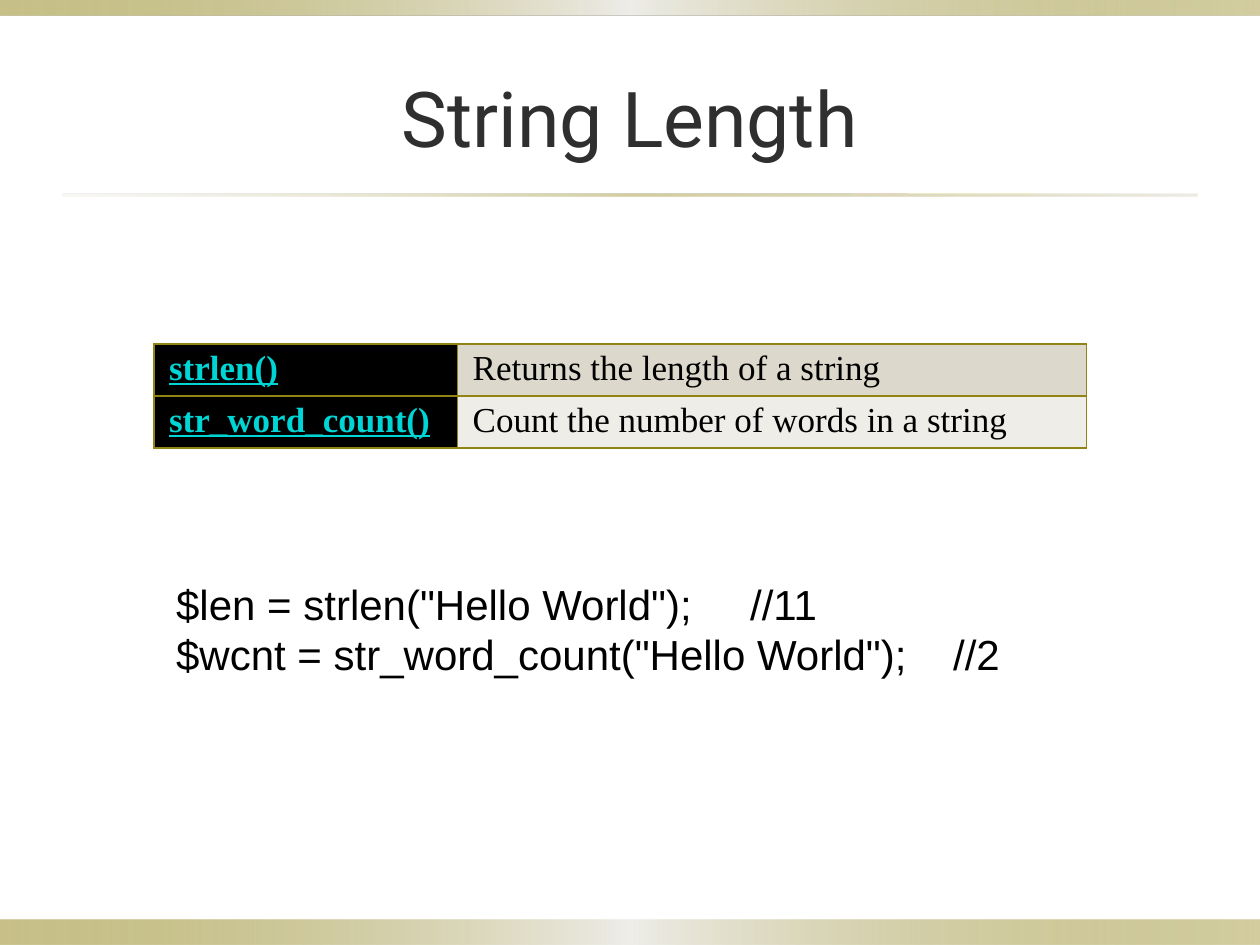
from dataclasses import dataclass

import lxml.etree
import pptx
import pptx.dml.color
import pptx.enum.shapes
import pptx.enum.text
import pptx.oxml
import pptx.oxml.ns
import pptx.util

Pt = pptx.util.Pt
Align = pptx.enum.text.PP_ALIGN
Anchor = pptx.enum.text.MSO_ANCHOR
qn = pptx.oxml.ns.qn


@dataclass(frozen=True)
class Theme:
    olive: str = "918415"
    sand: str = "DCD9CC"
    pale: str = "EEEDE8"
    title: str = "2F2F2F"
    ink: str = "000000"
    link: str = "00D5D5"
    title_size: int = 44
    table_size: int = 20
    code_size: int = 24
    title_font: str = "Roboto"
    table_font: str = "Times New Roman"
    code_font: str = "Arial"


THEME = Theme()
# Gradient stops: position %, colour, opacity %
BAND_STOPS = [(0, THEME.olive, 50), (50, THEME.pale, 100), (100, THEME.olive, 40)]
RULE_STOPS = [(0, THEME.sand, 20), (50, THEME.olive, 40), (100, THEME.sand, 50)]


def rgb(value):
    return pptx.dml.color.RGBColor.from_string(value)


def add_text(paragraph, text, *, font, size, color, bold=False,
             underline=False, align=Align.LEFT, tab=None):
    if tab is not None:
        tabs = lxml.etree.SubElement(paragraph._p.get_or_add_pPr(), qn("a:tabLst"))
        lxml.etree.SubElement(tabs, qn("a:tab"), pos=str(Pt(tab)), algn="l")
    paragraph.alignment = align
    run = paragraph.add_run()
    run.text = text
    run.font.name = font
    run.font.size = Pt(size)
    run.font.bold = bold
    run.font.underline = underline
    run.font.color.rgb = rgb(color)


def add_gradient_bar(slide, left, top, width, height, stops):
    bar = slide.shapes.add_shape(pptx.enum.shapes.MSO_SHAPE.RECTANGLE,
                                 Pt(left), Pt(top), Pt(width), Pt(height))
    bar.shadow.inherit = False
    bar.line.fill.background()
    bar.fill.gradient()
    bar.fill.gradient_angle = 0
    stop_list = bar._element.spPr.find(f".//{qn('a:gsLst')}")
    for default_stop in list(stop_list):
        stop_list.remove(default_stop)
    for position, color, opacity in stops:
        stop = lxml.etree.SubElement(stop_list, qn("a:gs"), pos=str(position * 1000))
        shade = lxml.etree.SubElement(stop, qn("a:srgbClr"), val=color)
        lxml.etree.SubElement(shade, qn("a:alpha"), val=str(opacity * 1000))


def add_frame(slide, left, top, width, height):
    add_gradient_bar(slide, left, top + height - 14.4, width, 14.4, BAND_STOPS)
    add_gradient_bar(slide, left, top, width, 8.64, BAND_STOPS)


def add_title(slide, left, top, width, height):
    add_gradient_bar(slide, left, top + height - 0.72, width, 1.44, RULE_STOPS)
    heading = slide.shapes.add_textbox(Pt(left), Pt(top), Pt(width), Pt(height)).text_frame
    heading.word_wrap = True
    heading.vertical_anchor = Anchor.MIDDLE
    add_text(heading.paragraphs[0], "String Length", font=THEME.title_font,
             size=THEME.title_size, color=THEME.title, align=Align.CENTER)


def add_borders(cell):
    for side in ("a:lnL", "a:lnR", "a:lnT", "a:lnB"):
        border = lxml.etree.SubElement(cell._tc.get_or_add_tcPr(), qn(side), w=str(Pt(1)))
        fill = lxml.etree.SubElement(border, qn("a:solidFill"))
        lxml.etree.SubElement(fill, qn("a:srgbClr"), val=THEME.olive)


def add_function_table(slide, left, top, width, height):
    functions = [("strlen()", "Returns the length of a string", THEME.sand),
                 ("str_word_count()", "Count the number of words in a string", THEME.pale)]
    table = slide.shapes.add_table(len(functions), 2, Pt(left), Pt(top),
                                   Pt(width), Pt(height)).table
    name_width = 173.5
    table.columns[0].width = Pt(name_width)
    table.columns[1].width = Pt(width - name_width)
    for row, (name, purpose, shade) in enumerate(functions):
        table.rows[row].height = Pt(height / len(functions))
        columns = [(name, THEME.ink, THEME.link, True), (purpose, shade, THEME.ink, False)]
        for column, (text, fill, color, is_name) in enumerate(columns):
            cell = table.cell(row, column)
            cell.margin_left = Pt(8.64)
            cell.margin_right = cell.margin_top = cell.margin_bottom = Pt(2.88)
            add_borders(cell)
            cell.fill.solid()
            cell.fill.fore_color.rgb = rgb(fill)
            add_text(cell.text_frame.paragraphs[0], text, font=THEME.table_font,
                     size=THEME.table_size, color=color, bold=is_name, underline=is_name)


def add_code(slide, left, top, width, height):
    # Each statement has its result in a comment at its own tab stop
    statements = [('$len = strlen("Hello World");\t//11', 328),
                  ('$wcnt = str_word_count("Hello World");\t//2', 444)]
    code = slide.shapes.add_textbox(Pt(left), Pt(top), Pt(width), Pt(height)).text_frame
    code.word_wrap = True
    for index, (statement, tab) in enumerate(statements):
        paragraph = code.add_paragraph() if index else code.paragraphs[0]
        add_text(paragraph, statement, font=THEME.code_font, size=THEME.code_size,
                 color=THEME.ink, tab=tab)


def main():
    deck = pptx.Presentation()
    deck.slide_width, deck.slide_height = Pt(720), Pt(540)
    slide = deck.slides.add_slide(deck.slide_layouts[6])
    add_frame(slide, 0, 0, 720, 540)
    add_title(slide, 36, 21.6, 648, 90)
    add_function_table(slide, 88, 196.5, 533, 59)
    add_code(slide, 93.6, 327, 489.6, 65.5)
    deck.save("out.pptx")


if __name__ == "__main__":
    main()
